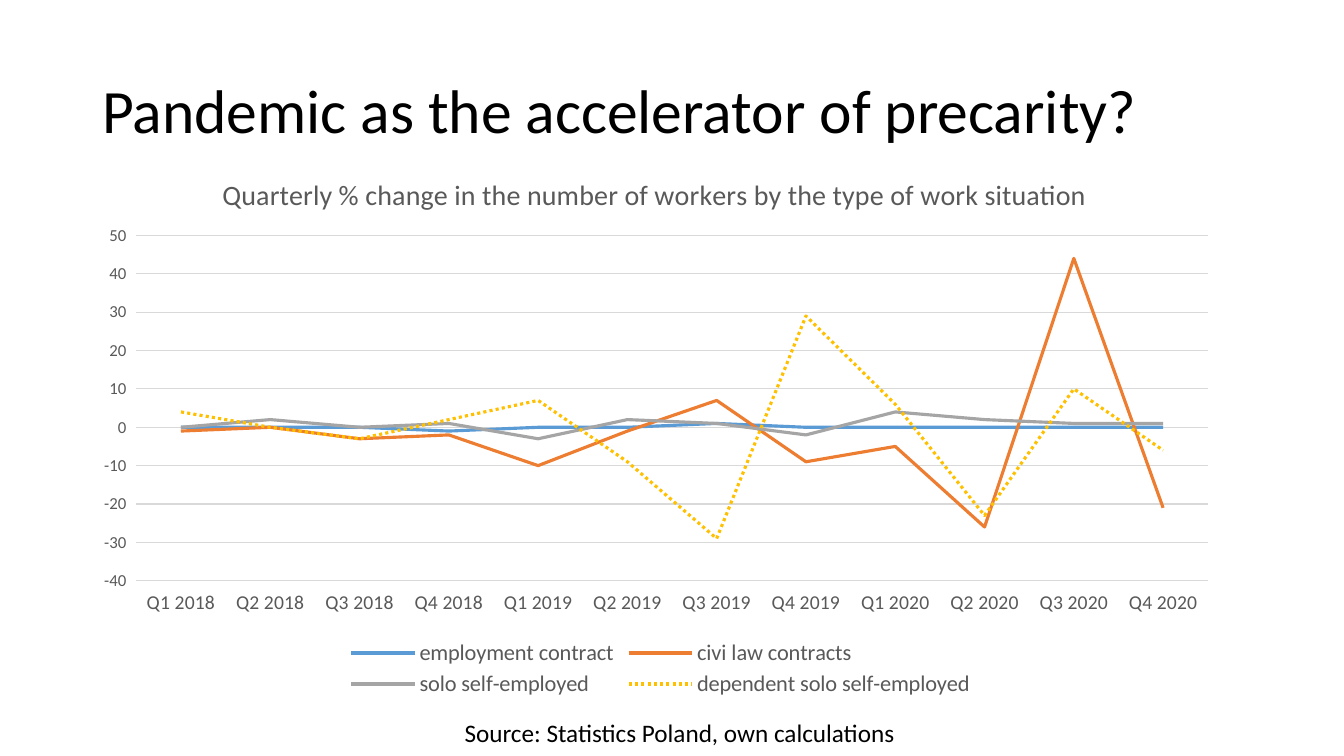
import pptx
import pptx.chart.data
import pptx.dml.color
import pptx.enum.chart
import pptx.enum.dml
import pptx.enum.text
import pptx.oxml
import pptx.oxml.ns
import pptx.util

Pt = pptx.util.Pt
FONT = "Calibri"
COLOURS = {
    "text": "000000", "label": "595959", "grid": "D9D9D9",
    "employment": "5B9BD5", "civil": "ED7D31", "solo": "A5A5A5", "dependent": "FFC000",
}
QUARTERS = [f"Q{quarter} {year}" for year in (2018, 2019, 2020) for quarter in range(1, 5)]
SERIES = [
    ("employment contract", "employment", [0, 0, 0, -1, 0, 0, 1, 0, 0, 0, 0, 0]),
    ("civi law contracts", "civil", [-1, 0, -3, -2, -10, -1, 7, -9, -5, -26, 44, -21]),
    ("solo self-employed", "solo", [0, 2, 0, 1, -3, 2, 1, -2, 4, 2, 1, 1]),
    ("dependent solo self-employed", "dependent", [4, 0, -3, 2, 7, -9, -29, 29, 6, -23, 10, -6]),
]


def colour(name):
    """Return the named palette colour."""
    return pptx.dml.color.RGBColor.from_string(COLOURS[name])


def style_font(font, size, name):
    """Set typeface, size and colour of a font."""
    font.name = FONT
    font.size = Pt(size)
    font.bold = False
    font.color.rgb = colour(name)


def style_line(line, name, width):
    """Set colour and width of a line."""
    line.color.rgb = colour(name)
    line.width = Pt(width)


def add_text(page, box, text, size, anchor, spacing=1.0):
    """Place a one-paragraph text box."""
    frame = page.shapes.add_textbox(*map(Pt, box)).text_frame
    frame.word_wrap = True
    frame.vertical_anchor = anchor
    para = frame.paragraphs[0]
    para.line_spacing = spacing
    span = para.add_run()
    span.text = text
    style_font(span.font, size, "text")


def set_layout(parent, box, before, inner=False):
    """Fix a chart part at fractions of the chart area, ahead of the named sibling."""
    for old in parent.findall(pptx.oxml.ns.qn("c:layout")):
        parent.remove(old)
    target = '<c:layoutTarget val="inner"/>' if inner else ""
    modes = "".join(f'<c:{axis}Mode val="edge"/>' for axis in "xy")
    sizes = "".join(f'<c:{key} val="{value}"/>' for key, value in zip("xywh", box))
    layout = pptx.oxml.parse_xml(
        f'<c:layout {pptx.oxml.ns.nsdecls("c")}><c:manualLayout>'
        f"{target}{modes}{sizes}</c:manualLayout></c:layout>")
    parent.find(pptx.oxml.ns.qn(before)).addprevious(layout)


def style_axes(chart):
    """Format the quarter axis, the percentage axis and the gridlines."""
    for axis, size in ((chart.category_axis, 14), (chart.value_axis, 12)):
        axis.major_tick_mark = pptx.enum.chart.XL_TICK_MARK.NONE
        axis.minor_tick_mark = pptx.enum.chart.XL_TICK_MARK.NONE
        axis.tick_label_position = pptx.enum.chart.XL_TICK_LABEL_POSITION.LOW
        style_font(axis.tick_labels.font, size, "label")
    style_line(chart.category_axis.format.line, "grid", 0.75)
    values = chart.value_axis
    values.minimum_scale, values.maximum_scale, values.major_unit = -40, 50, 10
    values.tick_labels.number_format = "0"
    values.tick_labels.number_format_is_linked = False
    values.format.line.fill.background()
    style_line(values.major_gridlines.format.line, "grid", 0.75)


def add_change_chart(page, box):
    """Place the line chart of quarterly changes."""
    data = pptx.chart.data.CategoryChartData(number_format="0")
    data.categories = QUARTERS
    for name, _, values in SERIES:
        data.add_series(name, values)
    kind = pptx.enum.chart.XL_CHART_TYPE.LINE
    chart = page.shapes.add_chart(kind, *map(Pt, box), data).chart
    style_font(chart.font, 10, "text")
    chart.has_title = True
    span = chart.chart_title.text_frame.paragraphs[0].add_run()
    span.text = "Quarterly % change in the number of workers by the type of work situation"
    style_font(span.font, 20, "label")
    chart.chart_title.include_in_layout = False
    chart.has_legend = True
    chart.legend.position = pptx.enum.chart.XL_LEGEND_POSITION.BOTTOM
    chart.legend.include_in_layout = False
    style_font(chart.legend.font, 16, "label")
    style_axes(chart)
    plot = chart.plots[0]
    plot.vary_by_categories = False
    for series, (_, name, _) in zip(plot.series, SERIES):
        series.smooth = False
        series.marker.style = pptx.enum.chart.XL_MARKER_STYLE.NONE
        style_line(series.format.line, name, 2.25)
        if name == "dependent":
            series.format.line.dash_style = pptx.enum.dml.MSO_LINE.ROUND_DOT
    area = chart._chartSpace.chart.plotArea
    set_layout(area, (0.05, 0.15, 0.93, 0.63), "c:lineChart", inner=True)
    set_layout(chart.legend._element, (0.23, 0.88, 0.55, 0.12), "c:overlay")


def main():
    """Build and save the slide."""
    deck = pptx.Presentation()
    deck.slide_width, deck.slide_height = Pt(960), Pt(540)
    page = deck.slides.add_slide(deck.slide_layouts[6])
    anchors = pptx.enum.text.MSO_ANCHOR
    add_text(page, (66, 28.75, 828, 104.4), "Pandemic as the accelerator of precarity?",
             44, anchors.MIDDLE, 0.9)
    add_change_chart(page, (56.2, 109.4, 823, 391.7))
    add_text(page, (324.7, 509, 569.5, 29), "Source: Statistics Poland, own calculations",
             18, anchors.TOP)
    deck.save("out.pptx")


if __name__ == "__main__":
    main()
